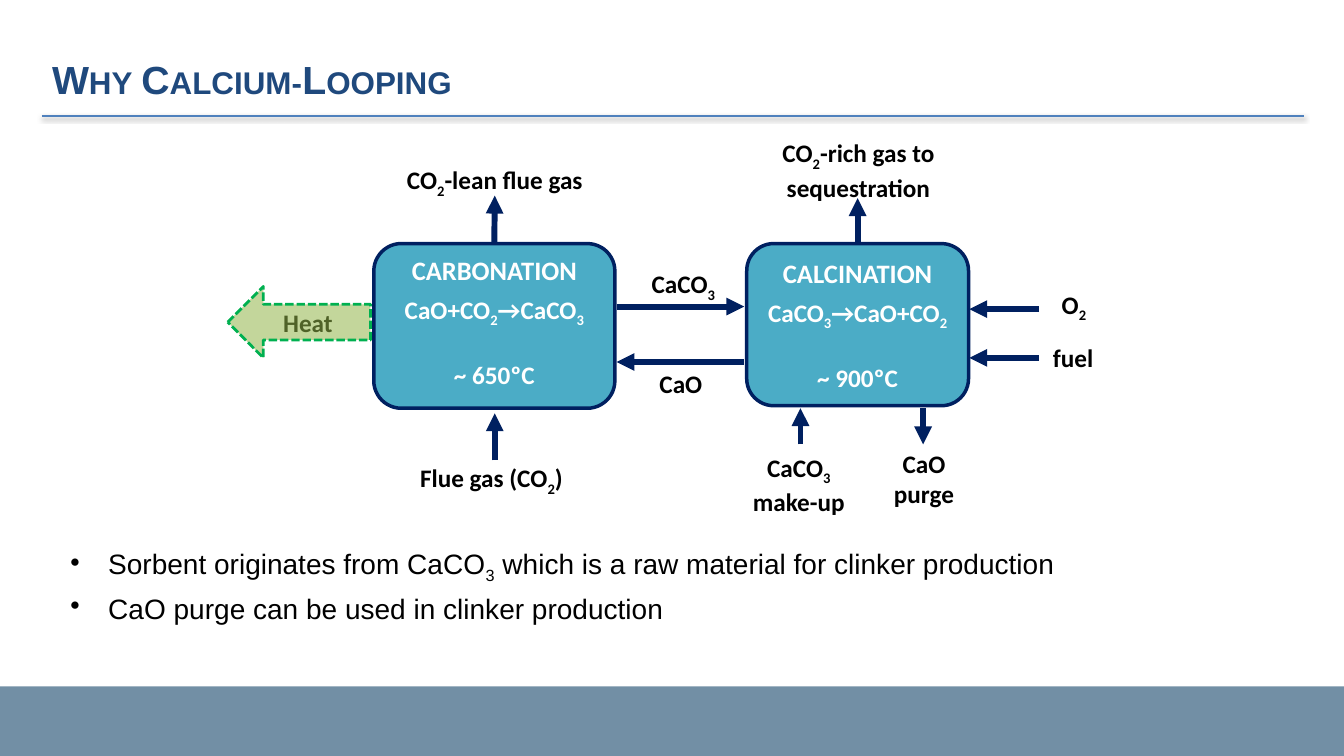
from dataclasses import dataclass

from pptx import Presentation
from pptx.dml.color import RGBColor
from pptx.enum.dml import MSO_LINE
from pptx.enum.shapes import MSO_CONNECTOR as Link, MSO_SHAPE as Preset
from pptx.enum.text import MSO_ANCHOR as Anchor, PP_ALIGN as Align
from pptx.oxml import parse_xml
from pptx.oxml.ns import nsdecls, qn
from pptx.util import Inches, Pt

COLUMNS, ROWS = 160, 90
TOP = 0


@dataclass(frozen=True)
class Theme:
    heading: str = "1F497D"
    rule: str = "4F81BD"
    footer: str = "728FA5"
    ink: str = "000000"
    white: str = "FFFFFF"
    reactor: str = "4BACC6"
    navy: str = "002060"
    heat: str = "C3D69B"
    heat_edge: str = "00B050"
    heat_ink: str = "4F6228"
    text_font: str = "Arial"
    diagram_font: str = "Calibri"
    title_size: int = 28
    body_size: int = 20
    reactor_size: int = 19
    label_size: int = 18


def rgb(code):
    return RGBColor.from_string(code)


class Board:
    def __init__(self, deck, theme):
        self.theme = theme
        self.column = deck.slide_width / COLUMNS
        self.row = deck.slide_height / ROWS
        self.slide = deck.slides.add_slide(deck.slide_layouts[5])
        self.shapes = self.slide.shapes

    def x(self, columns):
        return round(columns * self.column)

    def y(self, rows):
        return round(rows * self.row)

    def area(self, left, top, width, height):
        return self.x(left), self.y(top), self.x(width), self.y(height)

    def add_runs(self, paragraph, text, size, color, font, bold=False):
        for index, part in enumerate(text.split("_")):
            if not part:
                continue
            run = paragraph.add_run()
            run.text = part
            run.font.size = Pt(size)
            run.font.bold = bold
            run.font.name = font
            run.font.color.rgb = rgb(color)
            if index % 2:
                run.font._element.set("baseline", "-25000")

    def lines(self, frame, texts, size, color, font, bold=False, align=Align.CENTER):
        frame.word_wrap = True
        for index, text in enumerate(texts):
            paragraph = frame.add_paragraph() if index else frame.paragraphs[0]
            paragraph.alignment = align
            self.add_runs(paragraph, text, size, color, font, bold)
        return frame.paragraphs

    def title(self, text, *box):
        heading, theme = self.shapes.title, self.theme
        heading.left, heading.top, heading.width, heading.height = self.area(*box)
        frame = heading.text_frame
        frame.text = text
        frame.vertical_anchor = Anchor.BOTTOM
        frame.paragraphs[0].alignment = Align.LEFT
        font = frame.paragraphs[0].runs[0].font
        font.name, font.size, font.bold = theme.text_font, Pt(theme.title_size), True
        font.color.rgb = rgb(theme.heading)
        font._element.set("cap", "small")

    def bullets(self, texts, *box):
        theme = self.theme
        frame = self.shapes.add_textbox(*self.area(*box)).text_frame
        paragraphs = self.lines(frame, texts, theme.body_size, theme.ink,
                                theme.text_font, align=Align.LEFT)
        indent = self.x(4.5)
        for index, paragraph in enumerate(paragraphs):
            if index:
                paragraph.space_before = Pt(5)
            properties = paragraph._p.get_or_add_pPr()
            properties.set("marL", str(indent))
            properties.set("indent", str(-indent))
            properties.append(parse_xml(f'<a:buChar {nsdecls("a")} char="•"/>'))

    def label(self, texts, *box):
        theme = self.theme
        frame = self.shapes.add_textbox(*self.area(*box)).text_frame
        self.lines(frame, texts, theme.label_size, theme.ink, theme.diagram_font, True)

    def block(self, preset, fill, edge, width, *box):
        shape = self.shapes.add_shape(preset, *self.area(*box))
        shape.shadow.inherit = False
        shape.fill.solid()
        shape.fill.fore_color.rgb = rgb(fill)
        if edge:
            shape.line.color.rgb = rgb(edge)
            shape.line.width = Pt(width)
        else:
            shape.line.fill.background()
        shape.text_frame.vertical_anchor = Anchor.MIDDLE
        return shape

    def reactor(self, name, reaction, temperature, bottom_inset, *box):
        theme = self.theme
        shape = self.block(Preset.ROUNDED_RECTANGLE, theme.reactor, theme.navy, 2.5, *box)
        frame = shape.text_frame
        frame.margin_left = frame.margin_right = frame.margin_top = 0
        frame.margin_bottom = self.y(bottom_inset)
        heading, formula, heat = self.lines(
            frame, (name, reaction, temperature), theme.label_size, theme.white,
            theme.diagram_font, True)
        heading.runs[0].font.size = Pt(theme.reactor_size)
        formula.space_before = Pt(6)
        heat.space_before = Pt(22)
        return shape

    def heat_arrow(self, text, *box):
        theme = self.theme
        shape = self.block(Preset.LEFT_ARROW, theme.heat, theme.heat_edge, 2, *box)
        shape.line.dash_style = MSO_LINE.SQUARE_DOT
        self.lines(shape.text_frame, [text], theme.label_size, theme.heat_ink,
                   theme.diagram_font, True)

    def line(self, start, end, color, width, effect=""):
        link = self.shapes.add_connector(
            Link.STRAIGHT, self.x(start[0]), self.y(start[1]), self.x(end[0]), self.y(end[1]))
        link.line.color.rgb = rgb(color)
        link.line.width = Pt(width)
        link._element.spPr.append(
            parse_xml(f'<a:effectLst {nsdecls("a")}>{effect}</a:effectLst>'))
        return link

    def rule(self, start, end):
        shadow = (f'<a:outerShdw blurRad="{Pt(3.1)}" dist="{Pt(1.6)}" dir="5400000" '
                  'rotWithShape="0"><a:srgbClr val="000000"><a:alpha val="38000"/>'
                  '</a:srgbClr></a:outerShdw>')
        self.line(start, end, self.theme.rule, 2, shadow)

    def flow(self, start, end, source=None):
        link = self.line(start, end, self.theme.navy, 4.25)
        link._element.spPr.find(qn("a:ln")).append(
            parse_xml(f'<a:tailEnd {nsdecls("a")} type="triangle"/>'))
        if source is not None:
            link.begin_connect(source, TOP)


def main():
    deck = Presentation()
    deck.slide_width, deck.slide_height = Inches(13.33), Inches(7.5)
    theme = Theme()
    board = Board(deck, theme)

    board.rule((5, 13.8), (155.2, 13.8))
    board.block(Preset.RECTANGLE, theme.footer, None, 0, 0, 81.7, COLUMNS, ROWS - 81.7)
    board.title("Why Calcium-Looping", 5, 1.8, 150.2, 11)
    board.bullets(("Sorbent originates from CaCO_3_ which is a raw material for clinker production",
                   "CaO purge can be used in clinker production"), 7.2, 64.5, 128, 16)

    carbonation = board.reactor("CARBONATION", "CaO+CO_2_→CaCO_3", "~ 650ºC", 1,
                                44.5, 29, 28.7, 19.6)
    calcination = board.reactor("CALCINATION", "CaCO_3_→CaO+CO_2", "~ 900ºC", 0,
                                88.9, 29, 26.4, 19.3)
    board.heat_arrow("Heat", 27.1, 34.1, 17, 8.5)

    board.flow((58.9, 29), (58.9, 23.3), carbonation)
    board.flow((102.1, 29), (102.1, 23.6), calcination)
    for start, end in (
        ((73.4, 36.5), (88.6, 36.5)),
        ((88.6, 43.1), (73.4, 43.1)),
        ((58.9, 54.8), (58.9, 49.2)),
        ((95.3, 52.9), (95.3, 48.6)),
        ((109.9, 48.6), (109.9, 52.9)),
        ((123.7, 36.8), (115.4, 36.8)),
        ((123.7, 42.6), (115.4, 42.6)),
    ):
        board.flow(start, end)

    for texts, *box in (
        (["CO_2_-lean flue gas"], 41.9, 19, 34, 4.8),
        (["CO_2_-rich gas to sequestration"], 90.4, 15.8, 23.6, 8.5),
        (["CaCO_3"], 75.7, 31.4, 11.3, 4.8),
        (["CaO"], 75.4, 43.3, 11.3, 4.8),
        (["Flue gas (CO_2_)"], 46.5, 54.5, 24, 4.8),
        (["CaCO_3", "make-up"], 85.7, 53.2, 18.8, 8.5),
        (["CaO purge"], 102.6, 52.8, 14.8, 8.5),
        (["O_2"], 124.2, 33.8, 7.3, 4.8),
        (["fuel"], 124.1, 40.2, 7.3, 4.8),
    ):
        board.label(texts, *box)

    deck.save("out.pptx")


if __name__ == "__main__":
    main()
